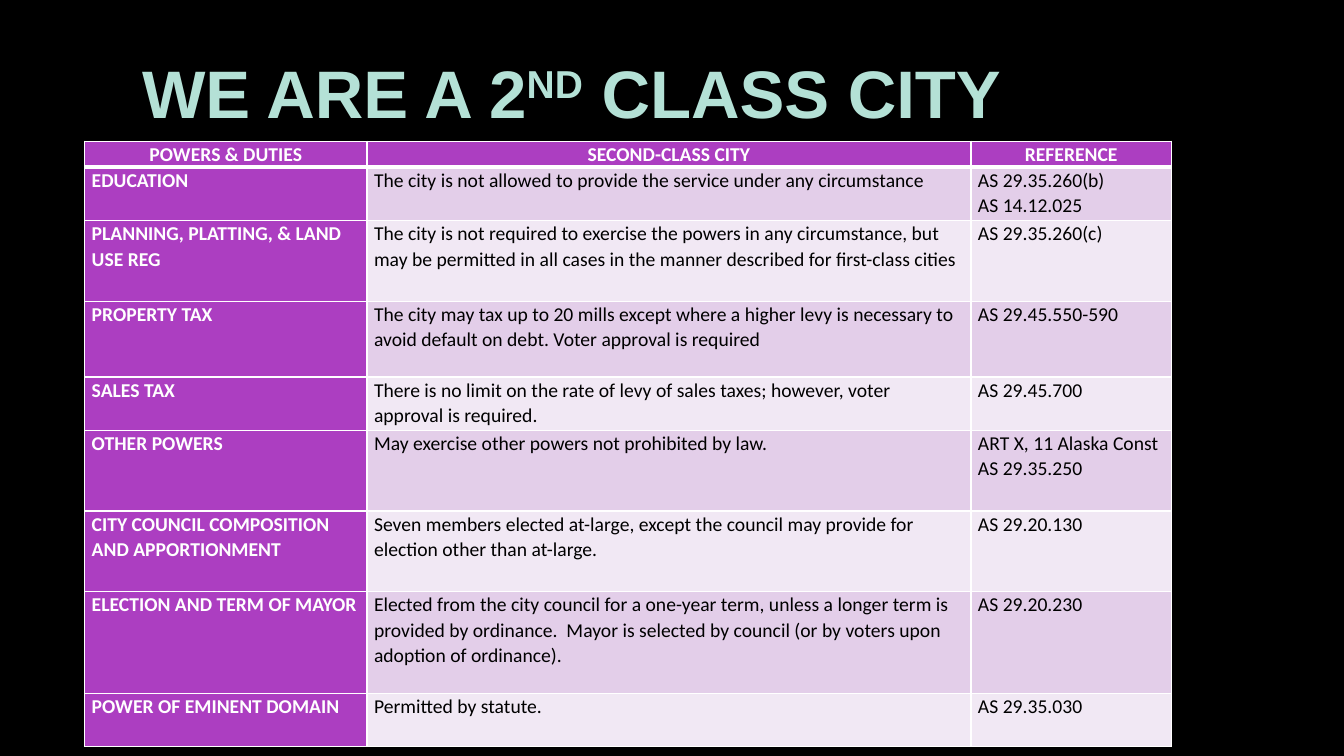
"""Build a slide with a table of the powers and duties of a second-class city."""
import pptx
import pptx.dml.color
import pptx.enum.text
import pptx.oxml
import pptx.oxml.ns
import pptx.util

TITLE = [("WE ARE A 2", 0), ("ND", 30000), (" CLASS CITY", 0)]
HEAD = ("POWERS & DUTIES", "SECOND-CLASS CITY", "REFERENCE")
BODY = [
    ("EDUCATION",
     "The city is not allowed to provide the service under any circumstance",
     "AS 29.35.260(b)\nAS 14.12.025"),
    ("PLANNING, PLATTING, & LAND USE REG",
     "The city is not required to exercise the powers in any circumstance, but may be "
     "permitted in all cases in the manner described for first-class cities",
     "AS 29.35.260(c)"),
    ("PROPERTY TAX",
     "The city may tax up to 20 mills except where a higher levy is necessary to avoid "
     "default on debt. Voter approval is required",
     "AS 29.45.550-590"),
    ("SALES TAX",
     "There is no limit on the rate of levy of sales taxes; however, voter approval is required.",
     "AS 29.45.700"),
    ("OTHER POWERS",
     "May exercise other powers not prohibited by law.",
     "ART X, 11 Alaska Const\nAS 29.35.250"),
    ("CITY COUNCIL COMPOSITION AND APPORTIONMENT",
     "Seven members elected at-large, except the council may provide for election "
     "other than at-large.",
     "AS 29.20.130"),
    ("ELECTION AND TERM OF MAYOR",
     "Elected from the city council for a one-year term, unless a longer term is provided "
     "by ordinance.  Mayor is selected by council (or by voters upon adoption of ordinance).",
     "AS 29.20.230"),
    ("POWER OF EMINENT DOMAIN", "Permitted by statute.", "AS 29.35.030"),
]
COLS = [2.8, 5.99, 1.99]
ROWS = [0.26, 0.53, 0.8, 0.75, 0.53, 0.8, 0.8, 1.01, 0.53]
HUES = {"back": "000000", "title": "B4E1D6", "head": "AC3EC1", "odd": "E3CEE9",
        "even": "F1E8F4", "line": "FFFFFF", "light": "FFFFFF", "dark": "000000"}

Inch, Pt = pptx.util.Inches, pptx.util.Pt
ALIGN = pptx.enum.text.PP_ALIGN


def hue(name):
    return pptx.dml.color.RGBColor.from_string(HUES[name])


def style(par, face, size, color, bold, align):
    par.alignment = align
    par.font.name, par.font.size, par.font.bold = face, Pt(size), bold
    par.font.color.rgb = hue(color)


def edge(cell, row):
    props = cell._tc.get_or_add_tcPr()
    wide = {"T": 3 if row == 1 else 1, "B": 3 if row == 0 else 1}
    for spot, side in enumerate("LRTB"):
        props.insert(spot, pptx.oxml.parse_xml(
            f'<a:ln{side} {pptx.oxml.ns.nsdecls("a")} w="{Pt(wide.get(side, 1))}">'
            f'<a:solidFill><a:srgbClr val="{HUES["line"]}"/></a:solidFill></a:ln{side}>'))


def fill_cell(cell, text, row, col):
    strong = row == 0 or col == 0
    cell.fill.solid()
    cell.fill.fore_color.rgb = hue("head" if strong else "odd" if row % 2 else "even")
    cell.margin_left = cell.margin_right = Inch(0.07)
    cell.margin_top = cell.margin_bottom = 0
    cell.text = text
    for par in cell.text_frame.paragraphs:
        par.line_spacing = 1.06
        style(par, "Calibri", 14, "light" if strong else "dark", strong,
              ALIGN.LEFT if row else ALIGN.CENTER)
    edge(cell, row)


def add_title(slide):
    title = slide.shapes.title
    title.left, title.top, title.width, title.height = map(Inch, (0.75, 0.26, 9.84, 1.3))
    frame = title.text_frame
    frame.vertical_anchor = pptx.enum.text.MSO_ANCHOR.MIDDLE
    par = frame.paragraphs[0]
    for text, lift in TITLE:
        run = par.add_run()
        run.text = text
        if lift:
            run._r.get_or_add_rPr().set("baseline", str(lift))
    style(par, "Arial", 48, "title", True, ALIGN.CENTER)


def add_grid(slide):
    grid = slide.shapes.add_table(len(ROWS), len(COLS), Inch(0.84), Inch(1.4),
                                  Inch(sum(COLS)), Inch(sum(ROWS))).table
    grid.horz_banding = False
    for col, width in zip(grid.columns, COLS):
        col.width = Inch(width)
    for row, height in zip(grid.rows, ROWS):
        row.height = Inch(height)
    for row, texts in enumerate([HEAD, *BODY]):
        for col, text in enumerate(texts):
            fill_cell(grid.cell(row, col), text, row, col)


def main():
    deck = pptx.Presentation()
    deck.slide_width, deck.slide_height = Inch(13.33), Inch(7.5)
    slide = deck.slides.add_slide(deck.slide_layouts.get_by_name("Title Only"))
    slide.background.fill.solid()
    slide.background.fill.fore_color.rgb = hue("back")
    add_title(slide)
    add_grid(slide)
    deck.save("out.pptx")


if __name__ == "__main__":
    main()
